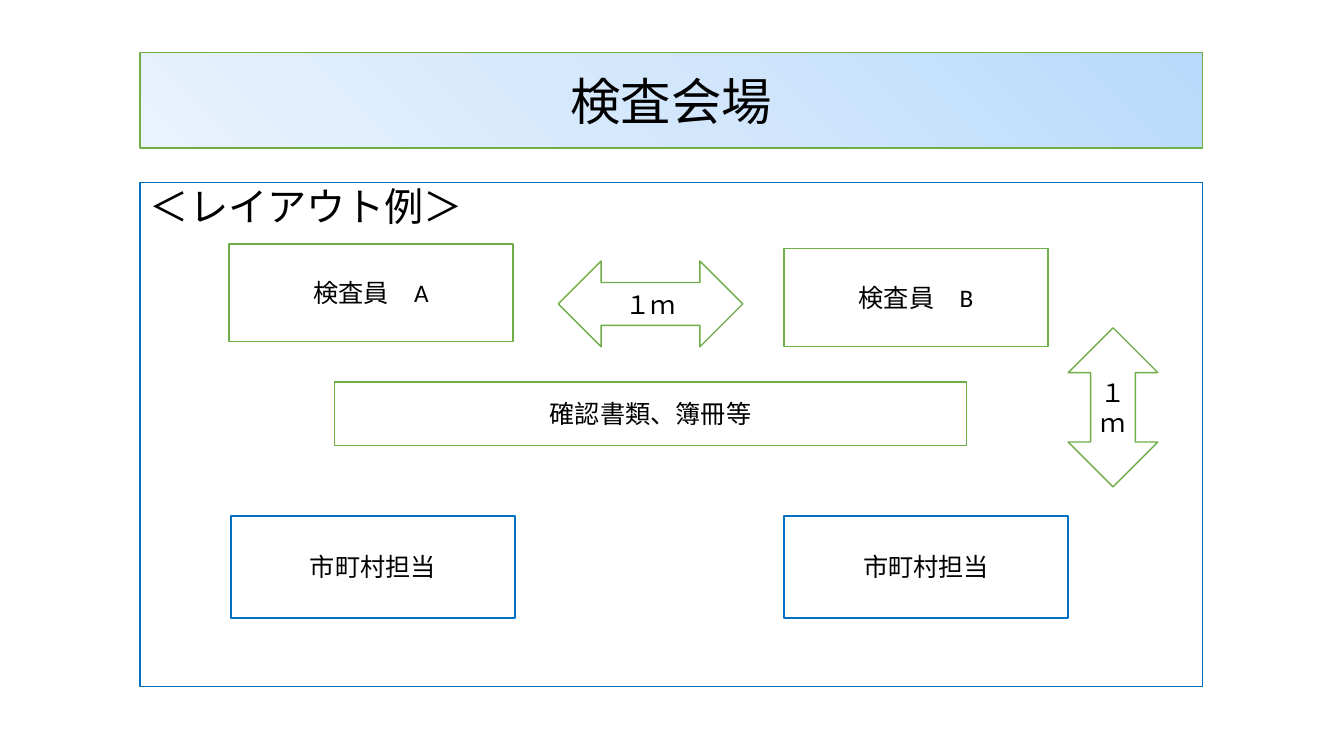
from pptx import Presentation
from pptx.dml.color import RGBColor
from pptx.enum.shapes import MSO_SHAPE
from pptx.enum.text import MSO_ANCHOR, PP_ALIGN
from pptx.oxml import parse_xml
from pptx.oxml.ns import nsdecls, qn
from pptx.util import Cm, Pt

RECTANGLE = MSO_SHAPE.RECTANGLE
ACROSS = MSO_SHAPE.LEFT_RIGHT_ARROW
UPRIGHT = MSO_SHAPE.UP_DOWN_ARROW

FONT = "Calibri"
COLORS = {"white": "FFFFFF", "black": "000000", "green": "70AD47", "blue": "0070C0"}
TITLE_STOPS = [(0, "B9DAFB"), (50, "D3E7FC"), (100, "E9F2FD")]

# Left edge and width shared by the title bar and the room frame, in cm
PAGE_LEFT, PAGE_WIDTH = 3.53, 26.77
RIGHT_COLUMN = 19.76
SEAT_WIDTH = 7.16

TITLE = ("検査会場", RECTANGLE, "green", (PAGE_LEFT, 1.32, PAGE_WIDTH, 2.41))
ROOM = ("＜レイアウト例＞", RECTANGLE, "blue", (PAGE_LEFT, 4.6, PAGE_WIDTH, 12.7))
FURNITURE = [
    ("検査員　A", RECTANGLE, "green", (5.77, 6.15, SEAT_WIDTH, 2.46)),
    ("検査員　B", RECTANGLE, "green", (RIGHT_COLUMN, 6.27, 6.65, 2.46)),
    ("１ｍ", ACROSS, "green", (14.07, 6.58, 4.65, 2.16)),
    ("確認書類、簿冊等", RECTANGLE, "green", (8.43, 9.63, 15.93, 1.6)),
    ("市町村担当", RECTANGLE, "blue", (5.82, 13, SEAT_WIDTH, 2.57)),
    ("市町村担当", RECTANGLE, "blue", (RIGHT_COLUMN, 13, SEAT_WIDTH, 2.57)),
    ("１ｍ", UPRIGHT, "green", (26.92, 8.26, 2.26, 4.01)),
]


def color(name):
    return RGBColor.from_string(COLORS[name])


def add_box(slide, text, kind, outline, place, size=18):
    shape = slide.shapes.add_shape(kind, *(Cm(length) for length in place))
    shape.shadow.inherit = False
    shape.fill.solid()
    shape.fill.fore_color.rgb = color("white")
    shape.line.color.rgb = color(outline)
    shape.line.width = Pt(1)
    frame = shape.text_frame
    frame.text = text
    frame.word_wrap = True
    frame.vertical_anchor = MSO_ANCHOR.MIDDLE
    paragraph = frame.paragraphs[0]
    paragraph.alignment = PP_ALIGN.CENTER
    font = paragraph.runs[0].font
    font.name, font.size = FONT, Pt(size)
    font.color.rgb = color("black")
    return shape


def fill_from_top_right(shape, stops):
    """Replace the solid fill with a radial gradient centred on the top right corner."""
    stop_xml = "".join(
        f'<a:gs pos="{percent * 1000}"><a:srgbClr val="{value}"/></a:gs>'
        for percent, value in stops
    )
    gradient = parse_xml(
        f'<a:gradFill {nsdecls("a")} rotWithShape="1"><a:gsLst>{stop_xml}</a:gsLst>'
        '<a:path path="circle"><a:fillToRect l="100000" b="100000"/></a:path>'
        "</a:gradFill>"
    )
    properties = shape._element.spPr
    properties.replace(properties.find(qn("a:solidFill")), gradient)


def main():
    presentation = Presentation()
    presentation.slide_width, presentation.slide_height = Cm(33.87), Cm(19.05)
    slide = presentation.slides.add_slide(presentation.slide_layouts[6])

    room = add_box(slide, *ROOM, size=28)
    room.text_frame.vertical_anchor = MSO_ANCHOR.TOP
    heading = room.text_frame.paragraphs[0]
    heading.alignment = PP_ALIGN.LEFT
    heading.line_spacing = 0.9
    heading.space_before = Pt(10)

    for item in FURNITURE:
        add_box(slide, *item)

    title = add_box(slide, *TITLE, size=36)
    fill_from_top_right(title, TITLE_STOPS)

    presentation.save("out.pptx")


if __name__ == "__main__":
    main()
